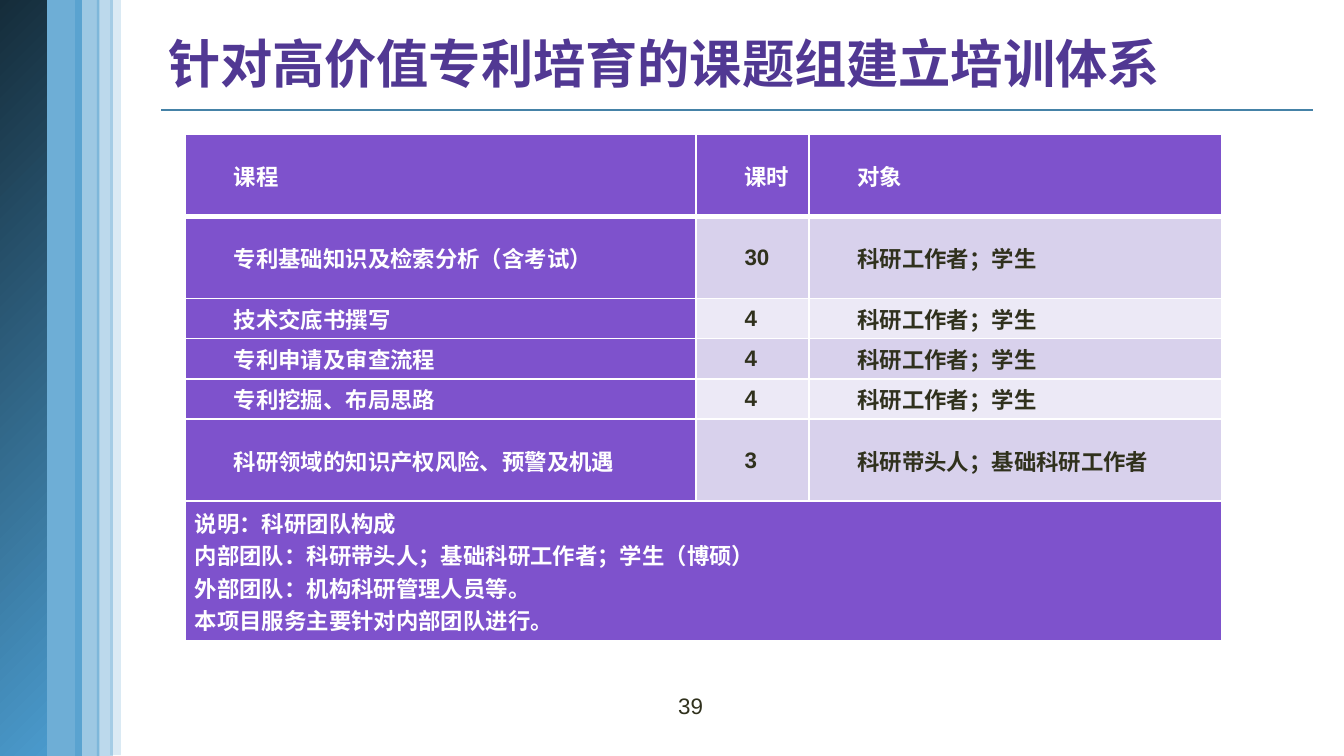
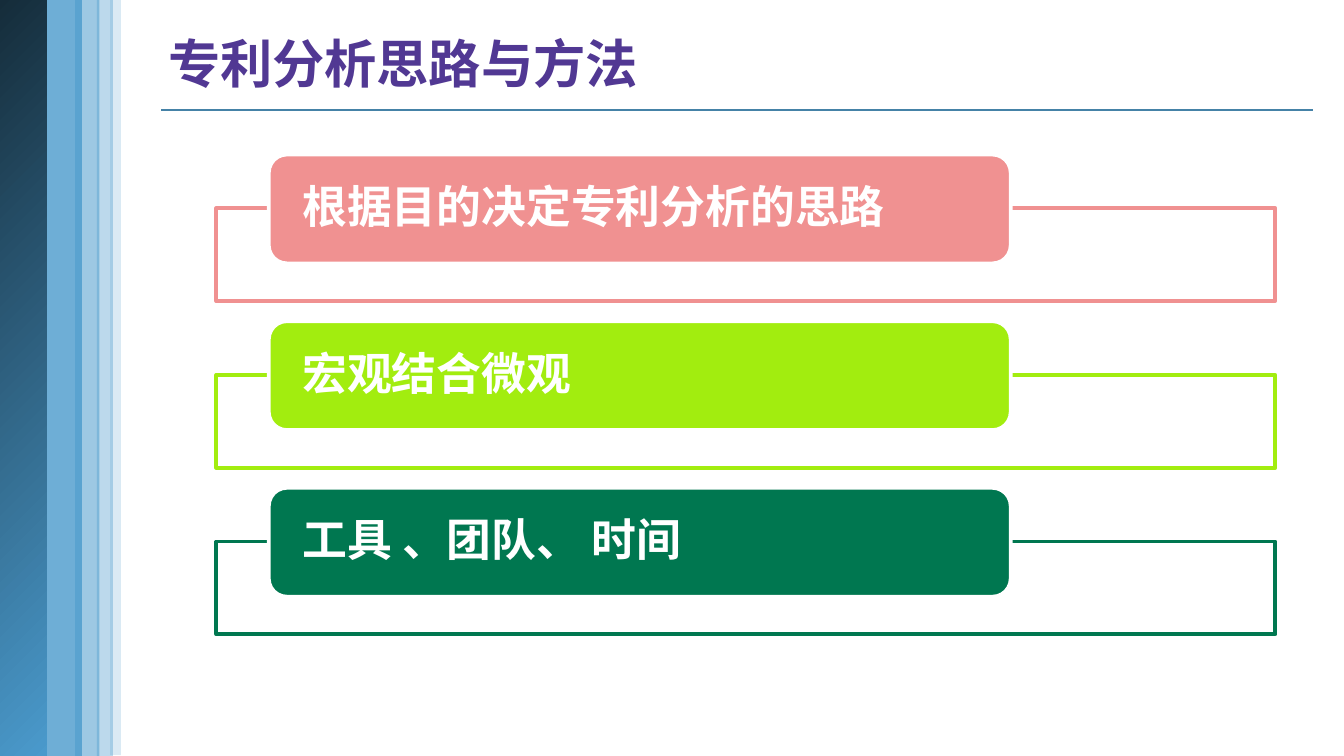
from lxml import etree
from pptx import Presentation
from pptx.dml.color import RGBColor
from pptx.enum.shapes import MSO_CONNECTOR, MSO_SHAPE
from pptx.enum.text import MSO_ANCHOR, MSO_AUTO_SIZE, PP_ALIGN
from pptx.oxml.ns import qn
from pptx.util import Inches, Pt

RECT = MSO_SHAPE.RECTANGLE
ROUND = MSO_SHAPE.ROUNDED_RECTANGLE
LINE = MSO_CONNECTOR.STRAIGHT
MID = MSO_ANCHOR.MIDDLE
LEFT, RIGHT, JUST = PP_ALIGN.LEFT, PP_ALIGN.RIGHT, PP_ALIGN.JUSTIFY
FIXED = MSO_AUTO_SIZE.NONE

COLORS = {
    "title": "513893", "rule": "4582A7", "dark": "152C3A", "blue": "4A9ACC",
    "ink": "30311D", "white": "FFFFFF", "head": "7E52CC",
    "band": "D8D1EC", "pale": "ECE9F6",
    "pink": "F09191", "lime": "A2ED0F", "green": "007750",
}
HAN = "Noto Sans CJK SC"

# Left strips: left, top, width, height, opacity (None means gradient)
STRIPS = [
    (0.3, 0, 0.31, 5.65, 80),
    (-0.01, 0, 0.36, 5.62, None),
    (0.82, -0.01, 0.08, 5.63, 20),
    (0.56, 0, 0.18, 5.63, 54),
    (0.72, 0, 0.12, 5.64, 37),
]


def rgb(name):
    return RGBColor.from_string(COLORS[name])


def box(*sizes):
    return [Inches(size) for size in sizes]


class Deck:
    def __init__(self):
        self.prs = Presentation()
        self.prs.slide_width = Inches(10)
        self.prs.slide_height = Inches(10 * 9 / 16)
        self.slide = None

    def style(self, para, size, color, bold=False, font="Arial", align=LEFT):
        para.alignment = align
        for run in para.runs:
            run.font.size = Pt(size)
            run.font.bold = bold
            run.font.name = font
            run.font.color.rgb = rgb(color)
            etree.SubElement(run.font._element, qn("a:ea"), typeface=HAN)

    def shape(self, kind, area, fill=None, alpha=100, line=None):
        item = self.slide.shapes.add_shape(kind, *box(*area))
        item.shadow.inherit = False
        if fill:
            item.fill.solid()
            item.fill.fore_color.rgb = rgb(fill)
        if alpha < 100:
            tone = item.element.spPr.find(".//" + qn("a:srgbClr"))
            etree.SubElement(tone, qn("a:alpha"), val=str(alpha * 1000))
        if line:
            item.line.color.rgb = rgb(line)
            item.line.width = Pt(2)
        else:
            item.line.fill.background()
        return item

    def rule(self):
        line = self.slide.shapes.add_connector(LINE, *box(1.2, 0.82, 9.77, 0.82))
        line.line.color.rgb = rgb("rule")
        line.line.width = Pt(1)
        etree.SubElement(line.element.spPr, qn("a:effectLst"))

    def strips(self):
        for *area, alpha in STRIPS:
            if alpha:
                self.shape(RECT, area, "blue", alpha)
                continue
            fill = self.shape(RECT, area).fill
            fill.gradient()
            fill.gradient_angle = 315
            for stop, color in zip(fill.gradient_stops, ("dark", "blue")):
                stop.color.rgb = rgb(color)

    def start(self, text):
        """Add a slide with the shared strips, rule and title."""
        self.slide = self.prs.slides.add_slide(self.prs.slide_layouts[5])
        self.rule()
        self.strips()
        title = self.slide.shapes.title
        title.left, title.top, title.width, title.height = box(1.15, 0.05, 8.7, 0.83)
        frame = title.text_frame
        frame.text = text
        frame.auto_size = FIXED
        frame.vertical_anchor = MID
        self.style(frame.paragraphs[0], 28, "title", True, HAN)

    def number(self, text):
        frame = self.slide.shapes.add_textbox(*box(4.61, 5.1, 0.72, 0.2)).text_frame
        frame.word_wrap = True
        frame.text = text
        self.style(frame.paragraphs[0], 12, "ink", align=RIGHT)

    def edge(self, side, width):
        line = etree.Element(qn("a:ln" + side), w=str(Pt(width)))
        fill = etree.SubElement(line, qn("a:solidFill"))
        etree.SubElement(fill, qn("a:srgbClr"), val=COLORS["white"])
        return line

    def cell(self, cell, text, fill, color, indent=0.29, top=1, base=1):
        cell.text = text
        cell.vertical_anchor = MID
        cell.margin_left = cell.margin_right = Inches(0.07)
        cell.margin_top = cell.margin_bottom = 0
        cell.fill.solid()
        cell.fill.fore_color.rgb = rgb(fill)
        for para in cell.text_frame.paragraphs:
            self.style(para, 12, color, True, align=JUST)
            if indent:
                para._p.get_or_add_pPr().set("indent", str(Inches(indent)))
        props = cell._tc.get_or_add_tcPr()
        for spot, (side, width) in enumerate(zip("LRTB", (1, 1, top, base))):
            props.insert(spot, self.edge(side, width))

    def table(self, rows, note, area, widths, heights):
        grid = self.slide.shapes.add_table(len(heights), len(widths), *box(*area)).table
        for col, width in zip(grid.columns, widths):
            col.width = Inches(width)
        for row, height in zip(grid.rows, heights):
            row.height = Inches(height)
        for r, row in enumerate(rows):
            for c, text in enumerate(row):
                head = r == 0 or c == 0
                fill = "head" if head else "band" if r % 2 else "pale"
                self.cell(grid.cell(r, c), text, fill, "white" if head else "ink",
                          top=3 if r == 1 else 1, base=1 if r else 3)
        last = len(heights) - 1
        foot = grid.cell(last, 0)
        foot.merge(grid.cell(last, len(widths) - 1))
        self.cell(foot, note, "head", "white", indent=0)

    def card(self, top, text, color):
        self.shape(RECT, (1.61, top + 0.4, 7.88, 0.69), "white", 90, color)
        label = self.shape(ROUND, (2, top, 5.52, 0.81), color, line="white")
        frame = label.text_frame
        frame.word_wrap = True
        frame.vertical_anchor = MID
        frame.margin_left = frame.margin_right = Inches(0.21)
        frame.margin_top = frame.margin_bottom = 0
        frame.text = text
        para = frame.paragraphs[0]
        para.line_spacing = 0.9
        para.space_after = Pt(8.4)
        self.style(para, 24, "white", True, "DejaVu Sans")


def main():
    deck = Deck()

    # Training courses
    deck.start("针对高价值专利培育的课题组建立培训体系")
    deck.number("39")
    group = "科研工作者；学生"
    rows = [
        ("课程", "课时", "对象"),
        ("专利基础知识及检索分析（含考试）", "30", group),
        ("技术交底书撰写", "4", group),
        ("专利申请及审查流程", "4", group),
        ("专利挖掘、布局思路", "4", group),
        ("科研领域的知识产权风险、预警及机遇", "3", "科研带头人；基础科研工作者"),
    ]
    note = "\n".join([
        "说明：科研团队构成",
        "内部团队：科研带头人；基础科研工作者；学生（博硕）",
        "外部团队：机构科研管理人员等。",
        "本项目服务主要针对内部团队进行。",
    ])
    deck.table(rows, note, (1.38, 1, 7.72, 3.78), (3.8, 0.84, 3.07),
               (0.61, 0.61, 0.3, 0.3, 0.3, 0.61, 1.04))

    # Ways to study patents
    deck.start("专利分析思路与方法")
    cards = [
        ("根据目的决定专利分析的思路", "pink"),
        ("宏观结合微观", "lime"),
        ("工具 、团队、 时间", "green"),
    ]
    for i, (text, color) in enumerate(cards):
        deck.card(1.15 + 1.24 * i, text, color)

    deck.prs.save("out.pptx")


if __name__ == "__main__":
    main()
